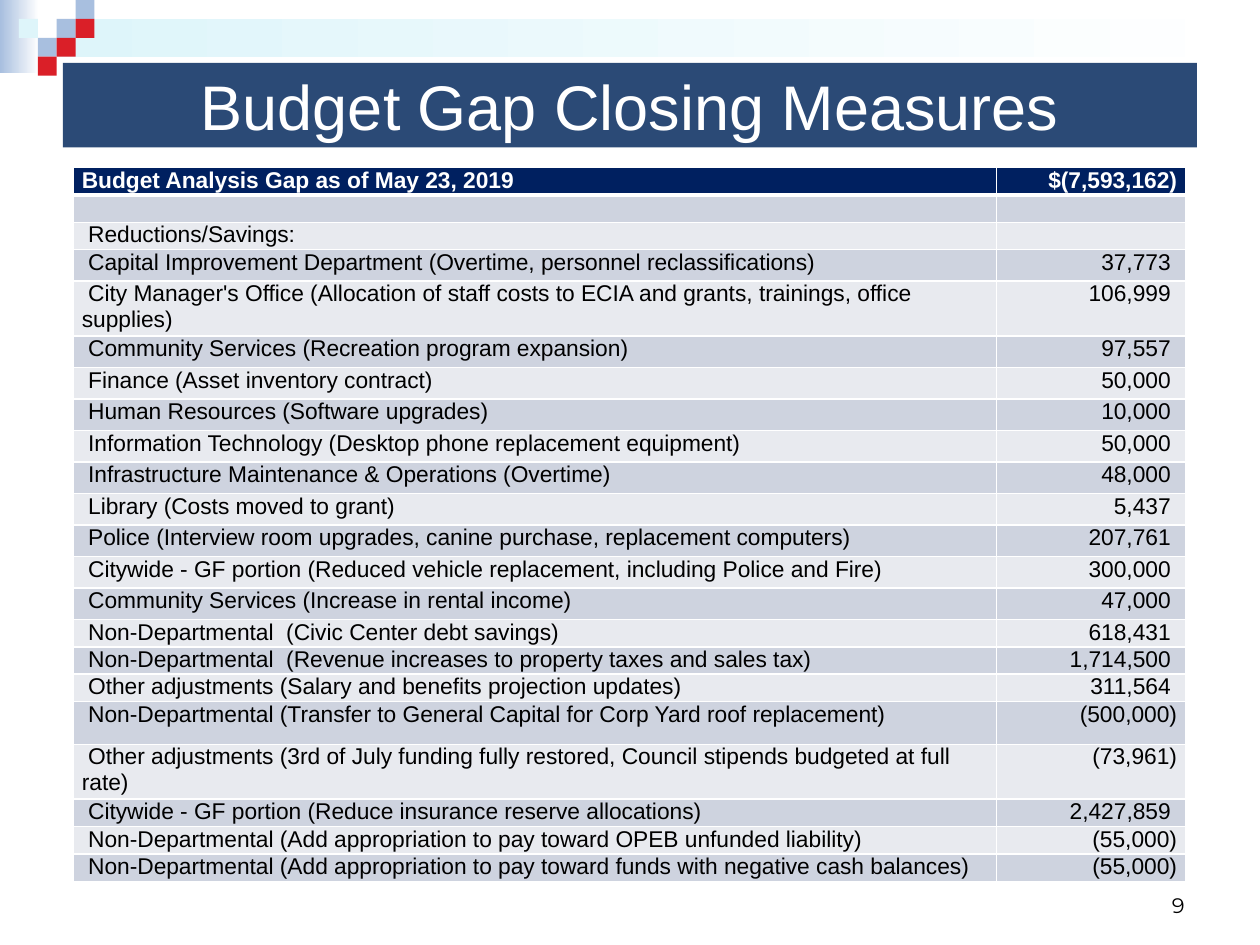
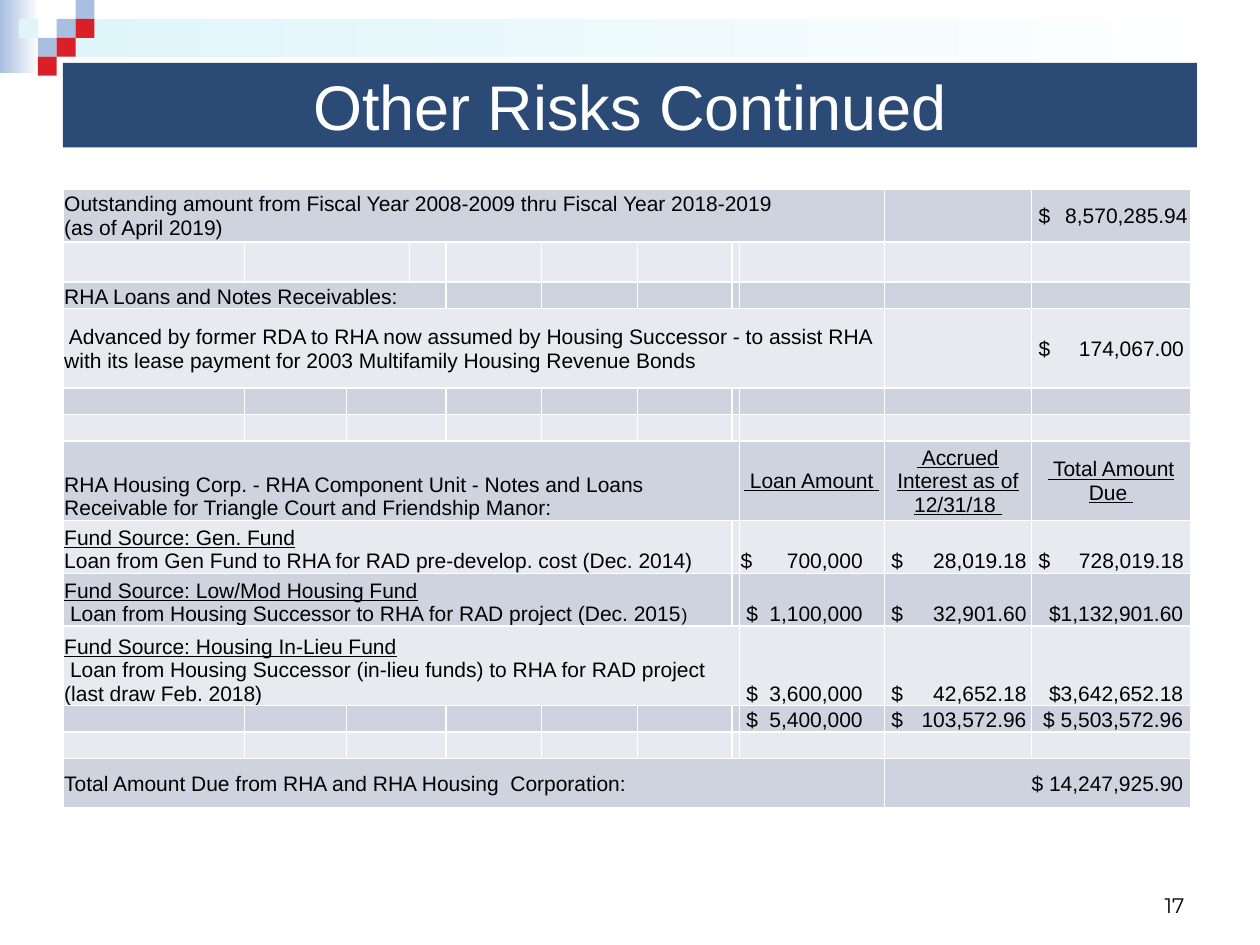
import lxml.etree
import pptx
import pptx.dml.color
import pptx.enum.shapes
import pptx.enum.text
import pptx.oxml.ns
import pptx.util

Inches, Pt = pptx.util.Inches, pptx.util.Pt
RGB = pptx.dml.color.RGBColor
ALIGN = pptx.enum.text.PP_ALIGN
ANCHOR = pptx.enum.text.MSO_ANCHOR
qn = pptx.oxml.ns.qn

WHITE = RGB(0xFF, 0xFF, 0xFF)
BLACK = RGB(0x00, 0x00, 0x00)
STEEL = RGB(0xA8, 0xBF, 0xDF)
ICE = RGB(0xDE, 0xF5, 0xFA)
RED = RGB(0xDA, 0x1F, 0x28)
TITLE_BLUE = RGB(0x2B, 0x4A, 0x76)
NAVY = RGB(0x00, 0x20, 0x60)
BANDS = (RGB(0xCE, 0xD3, 0xDF), RGB(0xE8, 0xEA, 0xEF))

GRID = 0.15
SQUARES = [(3, 1, STEEL), (4, 0, STEEL), (4, 1, RED), (2, 2, STEEL),
           (1, 1, ICE), (3, 2, RED), (2, 3, RED)]

# Slide 1: label, amount, row height
MEASURES = [
    ("Budget Analysis Gap as of May 23, 2019", " $(7,593,162)", 0.19),
    ("", "", 0.19),
    (" Reductions/Savings:", "", 0.19),
    (" Capital Improvement Department (Overtime, personnel reclassifications)", "37,773 ", 0.25),
    (" City Manager's Office (Allocation of staff costs to ECIA and grants, trainings, "
     "office supplies)", "106,999 ", 0.25),
    (" Community Services (Recreation program expansion)", "97,557 ", 0.25),
    (" Finance (Asset inventory contract)", "50,000 ", 0.25),
    (" Human Resources (Software upgrades)", "10,000 ", 0.25),
    (" Information Technology (Desktop phone replacement equipment)", "50,000 ", 0.25),
    (" Infrastructure Maintenance & Operations (Overtime)", "48,000 ", 0.25),
    (" Library (Costs moved to grant)", "5,437 ", 0.25),
    (" Police (Interview room upgrades, canine purchase, replacement computers)",
     "207,761 ", 0.25),
    (" Citywide - GF portion (Reduced vehicle replacement, including Police and Fire)",
     "300,000 ", 0.25),
    (" Community Services (Increase in rental income)", "47,000 ", 0.25),
    (" Non-Departmental  (Civic Center debt savings)", "618,431 ", 0.19),
    (" Non-Departmental  (Revenue increases to property taxes and sales tax)",
     "1,714,500 ", 0.19),
    (" Other adjustments (Salary and benefits projection updates)", "311,564 ", 0.19),
    (" Non-Departmental (Transfer to General Capital for Corp Yard roof replacement)",
     "(500,000)", 0.34),
    (" Other adjustments (3rd of July funding fully restored, Council stipends budgeted "
     "at full rate)", "(73,961)", 0.27),
    (" Citywide - GF portion (Reduce insurance reserve allocations)", "2,427,859 ", 0.19),
    (" Non-Departmental (Add appropriation to pay toward OPEB unfunded liability)",
     "(55,000)", 0.19),
    (" Non-Departmental (Add appropriation to pay toward funds with negative cash balances)",
     "(55,000)", 0.18),
]

# Slide 2: row height, anchor, merges {first column: span}, texts {column: text}
LOAN, INTEREST, DUE = 8, 9, 10
NUMBER_TABS = {LOAN: 0.97, INTEREST: 1.12, DUE: 1.2}
MID, LOW = ANCHOR.MIDDLE, ANCHOR.BOTTOM
LOANS_HEADER = 6
LOANS = [
    (0.42, MID, {0: 9}, {0: "Outstanding amount from Fiscal Year 2008-2009 thru Fiscal Year "
                            "2018-2019\n(as of April 2019)", DUE: " $\t8,570,285.94"}),
    (0.32, LOW, {1: 2}, {}),
    (0.21, LOW, {0: 4}, {0: "RHA Loans and Notes Receivables:"}),
    (0.63, MID, {0: 9}, {0: " Advanced by former RDA to RHA now assumed by Housing Successor - "
                            "to assist RHA with its lease payment for 2003 Multifamily Housing "
                            "Revenue Bonds", DUE: " $\t174,067.00"}),
    (0.21, LOW, {2: 2}, {}),
    (0.21, LOW, {2: 2}, {}),
    (0.63, LOW, {0: 8}, {0: "RHA Housing Corp. - RHA Component Unit - Notes and Loans "
                            "Receivable for Triangle Court and Friendship Manor:",
                         LOAN: " Loan Amount ", INTEREST: " Accrued Interest as of 12/31/18 ",
                         DUE: " Total Amount Due "}),
    (0.42, LOW, {0: 7}, {0: "Fund Source: Gen. Fund\nLoan from Gen Fund to RHA for RAD "
                            "pre-develop. cost (Dec. 2014)",
                         LOAN: "$\t700,000", INTEREST: " $\t28,019.18", DUE: " $\t728,019.18"}),
    (0.42, LOW, {0: 7}, {0: "Fund Source: Low/Mod Housing Fund\n Loan from Housing Successor "
                            "to RHA for RAD project (Dec. 2015",
                         LOAN: " $\t1,100,000", INTEREST: " $\t32,901.60",
                         DUE: " $1,132,901.60 "}),
    (0.63, LOW, {0: 8}, {0: "Fund Source: Housing In-Lieu Fund\n Loan from Housing Successor "
                            "(in-lieu funds) to RHA for RAD project (last draw Feb. 2018)",
                         LOAN: " $\t3,600,000", INTEREST: " $\t42,652.18",
                         DUE: " $3,642,652.18 "}),
    (0.21, LOW, {2: 2}, {LOAN: " $\t5,400,000", INTEREST: " $\t103,572.96",
                         DUE: " $ 5,503,572.96 "}),
    (0.1, LOW, {2: 2}, {}),
    (0.39, MID, {0: 9, 9: 2}, {0: "Total Amount Due from RHA and RHA Housing  Corporation:",
                               INTEREST: "$ 14,247,925.90 "}),
]


class Deck:
    """Holds the shared style and the slide being built."""
    text_style = {"name": "Arial", "size": Pt(12), "bold": False, "underline": False}

    def __init__(self, prs):
        self.prs = prs
        self.s = None

    def new_slide(self, title, number):
        self.s = self.prs.slides.add_slide(self.prs.slide_layouts[6])
        # Corner pattern and fading band
        self.rect(0, 0, 0.31, 0.58, STEEL, fade=True)
        self.rect(0.45, GRID, 9.55, 2 * GRID, ICE, fade=True)
        for col, row, color in SQUARES:
            self.rect(col * GRID, row * GRID, GRID, GRID, color)
        # Title bar
        sp = self.rect(0.5, 0.5, 9, 0.67, TITLE_BLUE)
        sp.text_frame.vertical_anchor = ANCHOR.MIDDLE
        self.put_text(sp.text_frame, title, ALIGN.CENTER, WHITE, size=Pt(36))
        # Page number
        tf = self.s.shapes.add_textbox(Inches(7.17), Inches(6.83),
                                       Inches(2.33), Inches(0.5)).text_frame
        tf.word_wrap = True
        tf.vertical_anchor = ANCHOR.BOTTOM
        self.put_text(tf, number, ALIGN.RIGHT, name="Montserrat")

    def rect(self, x, y, w, h, color, fade=False):
        sp = self.s.shapes.add_shape(pptx.enum.shapes.MSO_SHAPE.RECTANGLE,
                                     Inches(x), Inches(y), Inches(w), Inches(h))
        sp.shadow.inherit = False
        sp.line.fill.background()
        if fade:
            sp.fill.gradient()
            sp.fill.gradient_angle = 0
            for stop, (pos, rgb) in zip(sp.fill.gradient_stops, ((0, color), (1, WHITE))):
                stop.position = pos
                stop.color.rgb = rgb
        else:
            sp.fill.solid()
            sp.fill.fore_color.rgb = color
        return sp

    def add_text(self, p, text, color=BLACK, **style):
        r = p.add_run()
        r.text = text
        r.font.color.rgb = color
        for key, value in {**self.text_style, **style}.items():
            setattr(r.font, key, value)

    def put_text(self, tf, text, align=ALIGN.LEFT, color=BLACK, **style):
        for i, line in enumerate(text.split("\n")):
            p = tf.add_paragraph() if i else tf.paragraphs[0]
            p.alignment = align
            underline = style.get("underline", line.startswith("Fund Source:"))
            self.add_text(p, line, color, **{**style, "underline": underline})

    def number_tab(self, p, pos):
        tabs = lxml.etree.SubElement(p._p.get_or_add_pPr(), qn("a:tabLst"))
        lxml.etree.SubElement(tabs, qn("a:tab"), pos=str(Inches(pos)), algn="r")

    def border(self, cell, bottom=1):
        tc_pr = cell._tc.get_or_add_tcPr()
        for i, (side, width) in enumerate((("L", 1), ("R", 1), ("T", 1), ("B", bottom))):
            ln = lxml.etree.Element(qn("a:ln" + side), w=str(Pt(width)))
            fill = lxml.etree.SubElement(ln, qn("a:solidFill"))
            lxml.etree.SubElement(fill, qn("a:srgbClr"), val=str(WHITE))
            tc_pr.insert(i, ln)

    def table(self, x, y, widths, heights, insets, size, header=False):
        """Add an empty banded table with white rules."""
        t = self.s.shapes.add_table(len(heights), len(widths), Inches(x), Inches(y),
                                    Inches(sum(widths)), Inches(sum(heights))).table
        t.first_row = header
        t.horz_banding = False
        for col, w in zip(t.columns, widths):
            col.width = Inches(w)
        for i, (row, h) in enumerate(zip(t.rows, heights)):
            row.height = Inches(h)
            is_header = header and i == 0
            for cell in row.cells:
                cell.fill.solid()
                cell.fill.fore_color.rgb = NAVY if is_header else BANDS[(i + header) % 2]
                for side, value in zip(("left", "top", "right", "bottom"), insets):
                    setattr(cell, "margin_" + side, Inches(value))
                self.border(cell, bottom=3 if is_header else 1)
                end = cell.text_frame.paragraphs[0]._p.get_or_add_endParaRPr()
                end.set("sz", str(size * 100))
        return t


def budget_slide(d):
    d.new_slide("Budget Gap Closing Measures", "9")
    # The header is navy, so the bands begin with the darker one on the second row
    t = d.table(0.58, 1.33, [7.33, 1.5], [m[2] for m in MEASURES],
                (0.07, 0, 0.07, 0), 13, header=True)
    for i, (label, amount, _) in enumerate(MEASURES):
        color = BLACK if i else WHITE
        for j, (text, align) in enumerate(((label, ALIGN.LEFT), (amount, ALIGN.RIGHT))):
            if text:
                d.put_text(t.cell(i, j).text_frame, text, align, color,
                           size=Pt(13), bold=i == 0)


def risks_slide(d):
    d.new_slide("Other Risks Continued", "17")
    widths = [1.44, 0.81, 0.5, 0.29, 0.76, 0.76, 0.75, 0.04, 1.15, 1.17, 1.26]
    t = d.table(0.5, 1.5, widths, [row[0] for row in LOANS], (0.01, 0.01, 0.01, 0), 12)
    for i, (_, anchor, merges, texts) in enumerate(LOANS):
        for col, span in merges.items():
            t.cell(i, col).merge(t.cell(i, col + span - 1))
        for col, text in texts.items():
            cell = t.cell(i, col)
            heading = i == LOANS_HEADER and col >= LOAN
            cell.vertical_anchor = MID if heading else anchor
            if heading:
                d.put_text(cell.text_frame, text, ALIGN.CENTER, underline=True)
            elif "\t" in text or col < LOAN:
                d.put_text(cell.text_frame, text)
            else:
                d.put_text(cell.text_frame, text, ALIGN.RIGHT)
            if "\t" in text:
                # The first total is set flush with the cell edge
                d.number_tab(cell.text_frame.paragraphs[0],
                             1.23 if i == 0 else NUMBER_TABS[col])
    # Smaller closing bracket
    d.add_text(t.cell(8, 0).text_frame.paragraphs[-1], ")", size=Pt(10))


def main():
    prs = pptx.Presentation()
    prs.slide_width, prs.slide_height = Inches(10), Inches(7.5)
    d = Deck(prs)
    budget_slide(d)
    risks_slide(d)
    prs.save("out.pptx")


if __name__ == "__main__":
    main()
